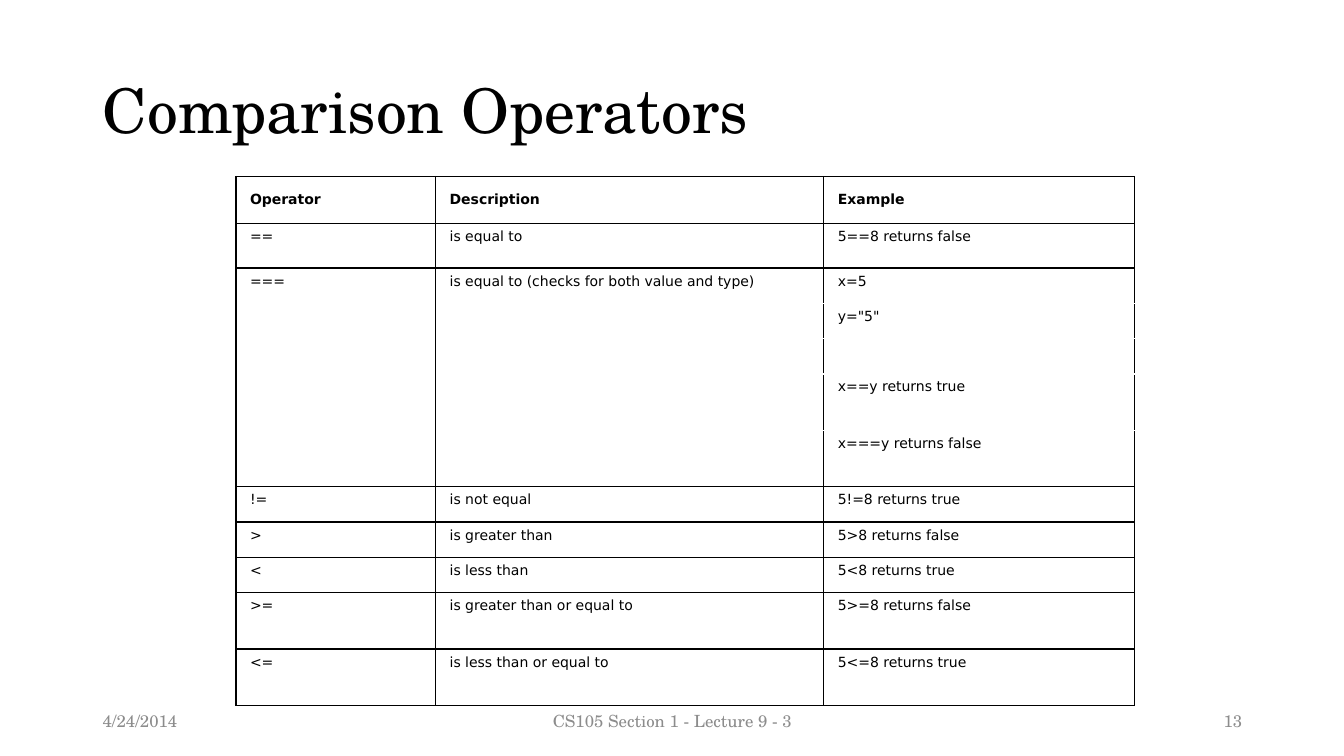
from lxml import etree
from pptx import Presentation
from pptx.dml.color import RGBColor
from pptx.enum.text import MSO_ANCHOR, PP_ALIGN
from pptx.oxml.ns import qn
from pptx.util import Inches, Pt

TITLE = "Comparison Operators"
ROWS = [
    ("Operator", "Description", "Example"),
    ("==", "is equal to", "5==8 returns false"),
    ("===", "is equal to (checks for both value and type)", "x=5"),
    ("", "", 'y="5"'),
    ("", "", ""),
    ("", "", "x==y returns true"),
    ("", "", "x===y returns false"),
    ("!=", "is not equal", "5!=8 returns true"),
    (">", "is greater than", "5>8 returns false"),
    ("<", "is less than", "5<8 returns true"),
    (">=", "is greater than or equal to", "5>=8 returns false"),
    ("<=", "is less than or equal to", "5<=8 returns true"),
]
WIDTHS = [1.98, 3.85, 3.08]
HEIGHTS = [0.47, 0.44, 0.35, 0.35, 0.35, 0.56, 0.56, 0.35, 0.35, 0.35, 0.56, 0.56]
FIRST, LAST = 2, 6

LEFT, CENTER, RIGHT = PP_ALIGN.LEFT, PP_ALIGN.CENTER, PP_ALIGN.RIGHT
TOP, MIDDLE = MSO_ANCHOR.TOP, MSO_ANCHOR.MIDDLE
FOOTER = [
    ("4/24/2014", 0.92, 3, LEFT),
    ("CS105 Section 1 - Lecture 9 - 3", 4.42, 4.5, CENTER),
    ("13", 9.42, 3, RIGHT),
]

SERIF, SANS = "TeX Gyre Schola", "DejaVu Sans"
BLACK = RGBColor(0, 0, 0)
WHITE = RGBColor(255, 255, 255)
GRAY = RGBColor(0x8C, 0x8C, 0x8C)


def style(par, name, size, color, bold=False):
    """Set the font of a whole paragraph."""
    font = par.font
    font.name, font.size, font.bold = name, Pt(size), bold
    font.color.rgb = color


def place(shape, left, top, width, height):
    """Move and size a shape, in inches."""
    shape.left, shape.top = Inches(left), Inches(top)
    shape.width, shape.height = Inches(width), Inches(height)


def border(cell, sides):
    """Draw black lines on the given sides of a cell."""
    for side in sides:
        line = etree.SubElement(cell._tc.get_or_add_tcPr(), qn("a:ln" + side), w=str(Pt(1)))
        fill = etree.SubElement(line, qn("a:solidFill"))
        etree.SubElement(fill, qn("a:srgbClr"), val=str(BLACK))


def fill_cell(cell, text, head, sides):
    """Write and format one table cell."""
    border(cell, sides)
    cell.fill.solid()
    cell.fill.fore_color.rgb = WHITE
    cell.margin_left = cell.margin_right = Inches(0.14)
    cell.margin_top = cell.margin_bottom = Inches(0.05)
    cell.vertical_anchor = MIDDLE if head else TOP
    par = cell.text_frame.paragraphs[0]
    style(par, SANS, 10, BLACK, head)
    props = par._p.get_or_add_pPr()
    props.set("marL", str(Inches(0.38)))
    props.set("indent", str(-Inches(0.38)))
    if text:
        par.add_run().text = text
    else:
        etree.SubElement(par._p, qn("a:endParaRPr"), sz="1000")


def add_grid(slide):
    """Add the table of operators."""
    frame = slide.shapes.add_table(len(ROWS), len(WIDTHS), Inches(2.34), Inches(1.75),
                                   Inches(sum(WIDTHS)), Inches(sum(HEIGHTS)))
    table = frame.table
    table.first_row = table.horz_banding = False
    for col, width in zip(table.columns, WIDTHS):
        col.width = Inches(width)
    for row, height in zip(table.rows, HEIGHTS):
        row.height = Inches(height)
    for r, texts in enumerate(ROWS):
        for c, text in enumerate(texts):
            sides = "LR"
            if c < 2 or not FIRST < r <= LAST:
                sides += "T"
            if c < 2 or not FIRST <= r < LAST:
                sides += "B"
            fill_cell(table.cell(r, c), text, r == 0, sides)
    for c in range(2):
        table.cell(FIRST, c).merge(table.cell(LAST, c))


def main():
    """Build the slide and save it."""
    deck = Presentation()
    deck.slide_width, deck.slide_height = Inches(13.33), Inches(7.5)
    slide = deck.slides.add_slide(deck.slide_layouts[5])

    title = slide.shapes.title
    place(title, 0.92, 0.4, 11.5, 1.45)
    title.text = TITLE
    title.text_frame.vertical_anchor = MIDDLE
    par = title.text_frame.paragraphs[0]
    par.alignment, par.line_spacing = LEFT, 0.9
    style(par, SERIF, 44, BLACK)

    add_grid(slide)

    for text, left, width, align in FOOTER:
        box = slide.shapes.add_textbox(Inches(left), Inches(6.95), Inches(width), Inches(0.4))
        frame = box.text_frame
        frame.word_wrap, frame.vertical_anchor = True, MIDDLE
        frame.text = text
        par = frame.paragraphs[0]
        par.alignment = align
        style(par, SERIF, 12, GRAY)

    deck.save("out.pptx")


if __name__ == "__main__":
    main()
